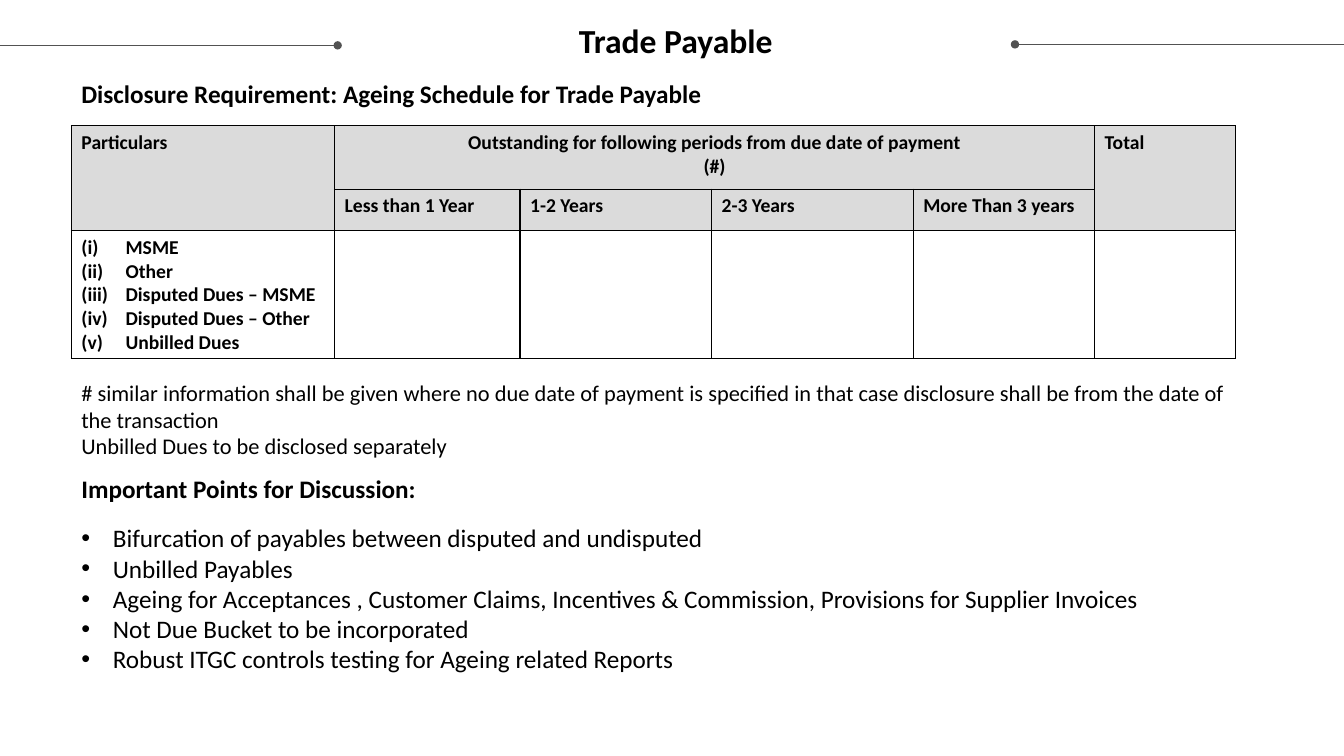
from lxml.etree import SubElement
from pptx import Presentation
from pptx.dml.color import RGBColor
from pptx.enum.shapes import MSO_CONNECTOR
from pptx.enum.text import MSO_ANCHOR, PP_ALIGN
from pptx.oxml.ns import qn
from pptx.util import Pt

COLORS = {"text": "000000", "rule": "525252", "header": "DBDBDB", "body": "FFFFFF", "border": "000000"}
FONT = "Calibri"
COLUMN_WIDTHS = [188, 132.5, 136.8, 144, 129.6, 100.8]
ROW_HEIGHTS = [45.4, 29.5, 91]
PERIODS = ["Less than 1 Year", "1-2 Years", "2-3 Years", "More Than 3 years"]
DUES = ["MSME", "Other", "Disputed Dues – MSME", "Disputed Dues – Other", "Unbilled Dues"]
NOTES = [
    "# similar information shall be given where no due date of payment is specified in that case "
    "disclosure shall be from the date of the transaction",
    "Unbilled Dues to be disclosed separately",
]
POINTS = [
    "Bifurcation of payables between disputed and undisputed",
    "Unbilled Payables",
    "Ageing for Acceptances , Customer Claims, Incentives & Commission, Provisions for Supplier Invoices",
    "Not Due Bucket to be incorporated",
    "Robust ITGC controls testing for Ageing related Reports",
]


def color(name):
    return RGBColor.from_string(COLORS[name])


def add_bullet(para, indent, tag, **attributes):
    properties = para._p.get_or_add_pPr()
    properties.set("marL", str(Pt(indent)))
    properties.set("indent", str(-Pt(indent)))
    if tag == "buChar":
        SubElement(properties, qn("a:buFont"), typeface="Arial")
    SubElement(properties, qn("a:" + tag), **attributes)


def style_para(para, size, bold=False, align=PP_ALIGN.LEFT):
    para.alignment = align
    para.font.name = FONT
    para.font.size = Pt(size)
    para.font.bold = bold
    para.font.color.rgb = color("text")


def fill_paras(frame, lines, size, bold=False, align=PP_ALIGN.LEFT, bullet=None):
    frame.text = "\n".join(lines)
    for para in frame.paragraphs:
        if bullet:
            add_bullet(para, **bullet)
        style_para(para, size, bold, align)


def add_text_frame(page, box):
    frame = page.shapes.add_textbox(*map(Pt, box)).text_frame
    frame.word_wrap = True
    return frame


def add_rule(page, start, end, dot):
    rule = page.shapes.add_connector(MSO_CONNECTOR.STRAIGHT, *map(Pt, (*start, *end)))
    rule.line.color.rgb = color("rule")
    rule.line.width = Pt(0.5)
    SubElement(rule.line._get_or_add_ln(), qn("a:" + dot), type="oval")
    SubElement(rule._element.spPr, qn("a:effectLst"))


def add_title(page, box):
    left, top, width, height = box
    add_rule(page, (725, 31.7), (960, 31.7), "headEnd")
    add_rule(page, (0, 32.4), (241.2, 32.4), "tailEnd")
    frame = add_text_frame(page, (left, top, width, height))
    frame.margin_left = frame.margin_top = frame.margin_right = frame.margin_bottom = 0
    fill_paras(frame, [" Trade Payable"], 24, True, PP_ALIGN.CENTER)
    frame.paragraphs[0].line_spacing = 0.9


def style_cell(cell, fill):
    properties = cell._tc.get_or_add_tcPr()
    for side in ("lnL", "lnR", "lnT", "lnB"):
        line = SubElement(properties, qn("a:" + side), w=str(Pt(1)))
        solid = SubElement(line, qn("a:solidFill"))
        SubElement(solid, qn("a:srgbClr"), val=COLORS["border"])
    cell.fill.solid()
    cell.fill.fore_color.rgb = color(fill)
    cell.vertical_anchor = MSO_ANCHOR.TOP


def add_ageing_table(page, left, top):
    table = page.shapes.add_table(
        len(ROW_HEIGHTS), len(COLUMN_WIDTHS), Pt(left), Pt(top),
        Pt(sum(COLUMN_WIDTHS)), Pt(sum(ROW_HEIGHTS))).table
    table.first_row = table.horz_banding = False
    for column, width in zip(table.columns, COLUMN_WIDTHS):
        column.width = Pt(width)
    for index, (row, height) in enumerate(zip(table.rows, ROW_HEIGHTS)):
        row.height = Pt(height)
        for cell in row.cells:
            style_cell(cell, "header" if index < 2 else "body")

    table.cell(0, 0).merge(table.cell(1, 0))
    table.cell(0, 1).merge(table.cell(0, 4))
    table.cell(0, 5).merge(table.cell(1, 5))
    fill_paras(table.cell(0, 0).text_frame, ["Particulars"], 14, True)
    fill_paras(table.cell(0, 1).text_frame,
               ["Outstanding for following periods from due date of payment", "(#)"],
               14, True, PP_ALIGN.CENTER)
    fill_paras(table.cell(0, 5).text_frame, ["Total"], 14, True)
    for column, period in enumerate(PERIODS, 1):
        fill_paras(table.cell(1, column).text_frame, [period], 14, True)
    fill_paras(table.cell(2, 0).text_frame, DUES, 14, True,
               bullet={"indent": 31.5, "tag": "buAutoNum", "type": "romanLcParenBoth"})


def add_heading(page, box):
    fill_paras(add_text_frame(page, box),
               ["Disclosure Requirement: Ageing Schedule for Trade Payable"], 18, True)


def add_notes(page, box):
    fill_paras(add_text_frame(page, box), NOTES, 16, align=PP_ALIGN.JUSTIFY)


def add_discussion(page, box):
    frame = add_text_frame(page, box)
    fill_paras(frame, ["Important Points for Discussion:"], 18, True)
    frame.paragraphs[0].space_after = Pt(13.4)
    for point in POINTS:
        para = frame.add_paragraph()
        para.text = point
        add_bullet(para, 22.5, "buChar", char="•")
        style_para(para, 18)


def main():
    deck = Presentation()
    deck.slide_width, deck.slide_height = Pt(960), Pt(540)
    page = deck.slides.add_slide(deck.slide_layouts[6])
    left = 51
    add_title(page, (18, 17.3, 924, 26))
    add_ageing_table(page, left, 89.8)
    add_heading(page, (left, 52.6, 694, 29))
    add_notes(page, (left, 267.1, 831, 67.7))
    add_discussion(page, (left, 334.8, 841.7, 151))
    deck.save("out.pptx")


if __name__ == "__main__":
    main()
